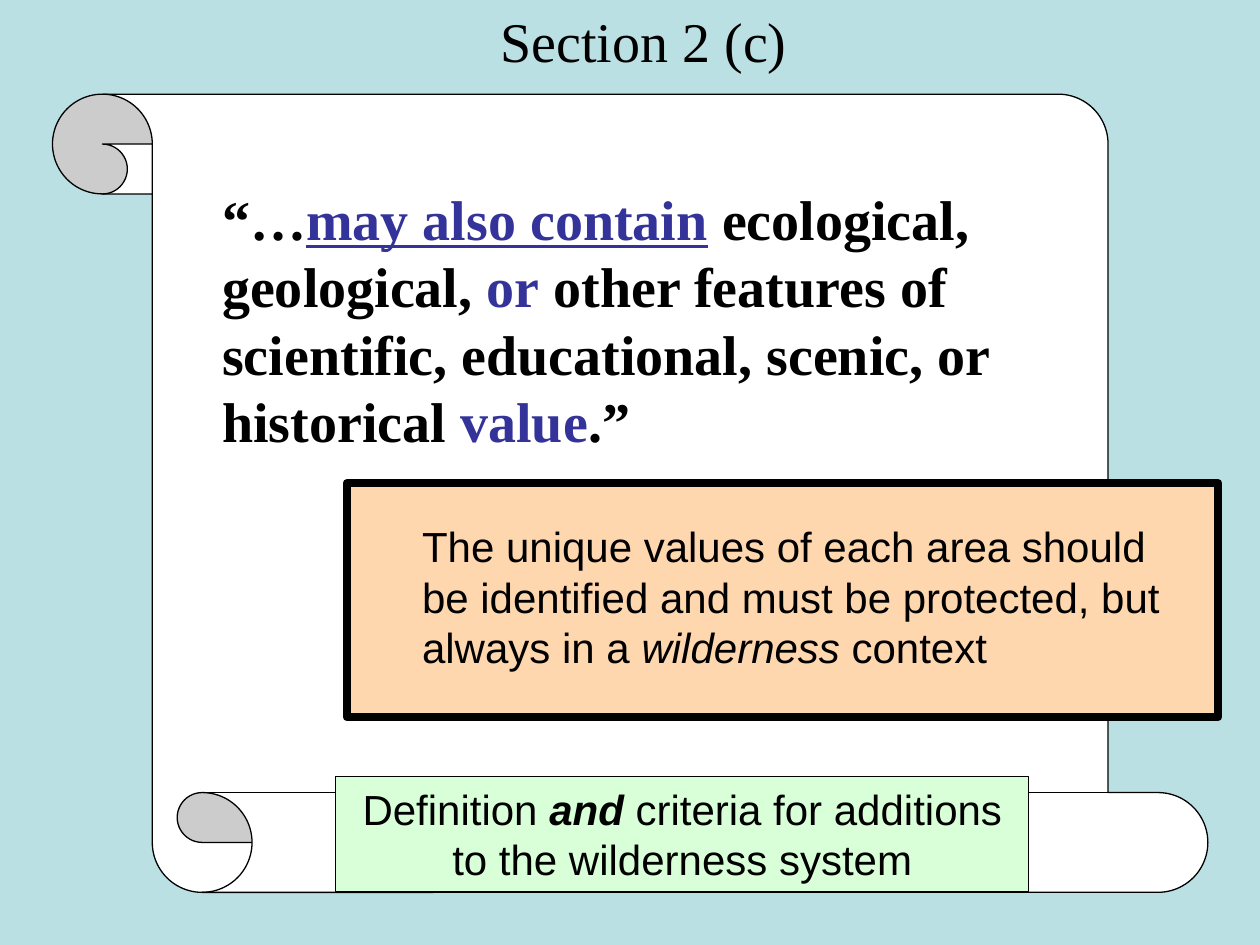
from pptx import Presentation
from pptx import util as u
from pptx.dml.color import RGBColor
from pptx.enum import shapes, text

SERIF, SANS = "Times New Roman", "Arial"
BLACK, WHITE, BLUE = "000000", "FFFFFF", "333399"


def rgb(value):
    """Turn a hex string into a colour."""
    return RGBColor.from_string(value)


def place(sp, left, top, width, height):
    """Set the position and size of a shape in centimetres."""
    sp.left, sp.top = u.Cm(left), u.Cm(top)
    sp.width, sp.height = u.Cm(width), u.Cm(height)


def write(sp, runs, font, size, align=text.PP_ALIGN.LEFT, anchor=text.MSO_ANCHOR.TOP):
    """Fill a shape with one paragraph of (words, style) runs."""
    tf = sp.text_frame
    tf.word_wrap = True
    tf.vertical_anchor = anchor
    p = tf.paragraphs[0]
    p.alignment = align
    for words, style in runs:
        r = p.add_run()
        r.text = words
        r.font.name, r.font.size = font, u.Pt(size)
        r.font.color.rgb = rgb(style.get("color", BLACK))
        r.font.bold = style.get("bold", False)
        r.font.italic = style.get("italic", False)
        r.font.underline = style.get("underline", False)
    return p


def add_panel(s, kind, box, fill, line_width):
    """Add a filled, black-outlined preset shape."""
    sp = s.shapes.add_shape(kind, *map(u.Cm, box))
    sp.shadow.inherit = False
    sp.fill.solid()
    sp.fill.fore_color.rgb = rgb(fill)
    sp.line.color.rgb = rgb(BLACK)
    sp.line.width = u.Pt(line_width)
    return sp


def add_title(s):
    """Fill the title placeholder."""
    sp = s.shapes.title
    place(sp, 5.08, 0, 16.08, 1.63)
    write(sp, [("Section 2 (c) ", {})], SERIF, 32,
          text.PP_ALIGN.CENTER, text.MSO_ANCHOR.MIDDLE)


def add_scroll(s):
    """Add the scroll with its rolled end at the top left."""
    sp = add_panel(s, shapes.MSO_SHAPE.VERTICAL_SCROLL,
                   (1.06, 1.9, 23.29, 16.09), WHITE, 0.75)
    sp.adjustments[0] = 0.125
    sp._element.spPr.xfrm.set("flipV", "1")


def add_quote(s):
    """Add the quotation with its key words in blue."""
    sp = s.shapes.add_textbox(*map(u.Cm, (4.23, 3.6, 17.15, 5.67)))
    plain, key = {"bold": True}, {"bold": True, "color": BLUE}
    write(sp, [
        ("“…", plain),
        ("may also contain", {**key, "underline": True}),
        (" ecological, geological, ", plain),
        ("or", key),
        (" other features of scientific, educational, scenic, or historical ", plain),
        ("value", key),
        (".”", plain),
    ], SERIF, 32)


def add_values_box(s):
    """Add the indented note on the values of each area."""
    sp = add_panel(s, shapes.MSO_SHAPE.RECTANGLE,
                   (6.99, 9.74, 17.57, 4.72), "FFD7AF", 4.5)
    tf = sp.text_frame
    tf.margin_left = u.Cm(0.25)
    tf.margin_top = tf.margin_right = tf.margin_bottom = u.Cm(0.76)
    p = write(sp, [
        ("The unique values of each area should be identified "
         "and must be protected, but always in a ", {}),
        ("wilderness", {"italic": True}),
        (" context", {}),
    ], SANS, 24)
    p.level = 1
    pPr = p._p.get_or_add_pPr()
    pPr.set("marL", str(u.Cm(1.27)))
    pPr.set("indent", "0")


def add_criteria_box(s):
    """Add the centred note on definition and criteria."""
    sp = add_panel(s, shapes.MSO_SHAPE.RECTANGLE,
                   (6.77, 15.66, 13.97, 2.32), "D9FFD9", 0.75)
    write(sp, [
        ("Definition ", {}),
        ("and ", {"bold": True, "italic": True}),
        ("criteria for additions to the wilderness system", {}),
    ], SANS, 24, text.PP_ALIGN.CENTER)


def main():
    """Build the slide and save it."""
    prs = Presentation()
    prs.slide_width, prs.slide_height = u.Cm(25.4), u.Cm(19.05)
    s = prs.slides.add_slide(prs.slide_layouts[5])
    s.background.fill.solid()
    s.background.fill.fore_color.rgb = rgb("BBE0E3")
    add_title(s)
    add_scroll(s)
    add_quote(s)
    add_values_box(s)
    add_criteria_box(s)
    prs.save("out.pptx")


if __name__ == "__main__":
    main()
